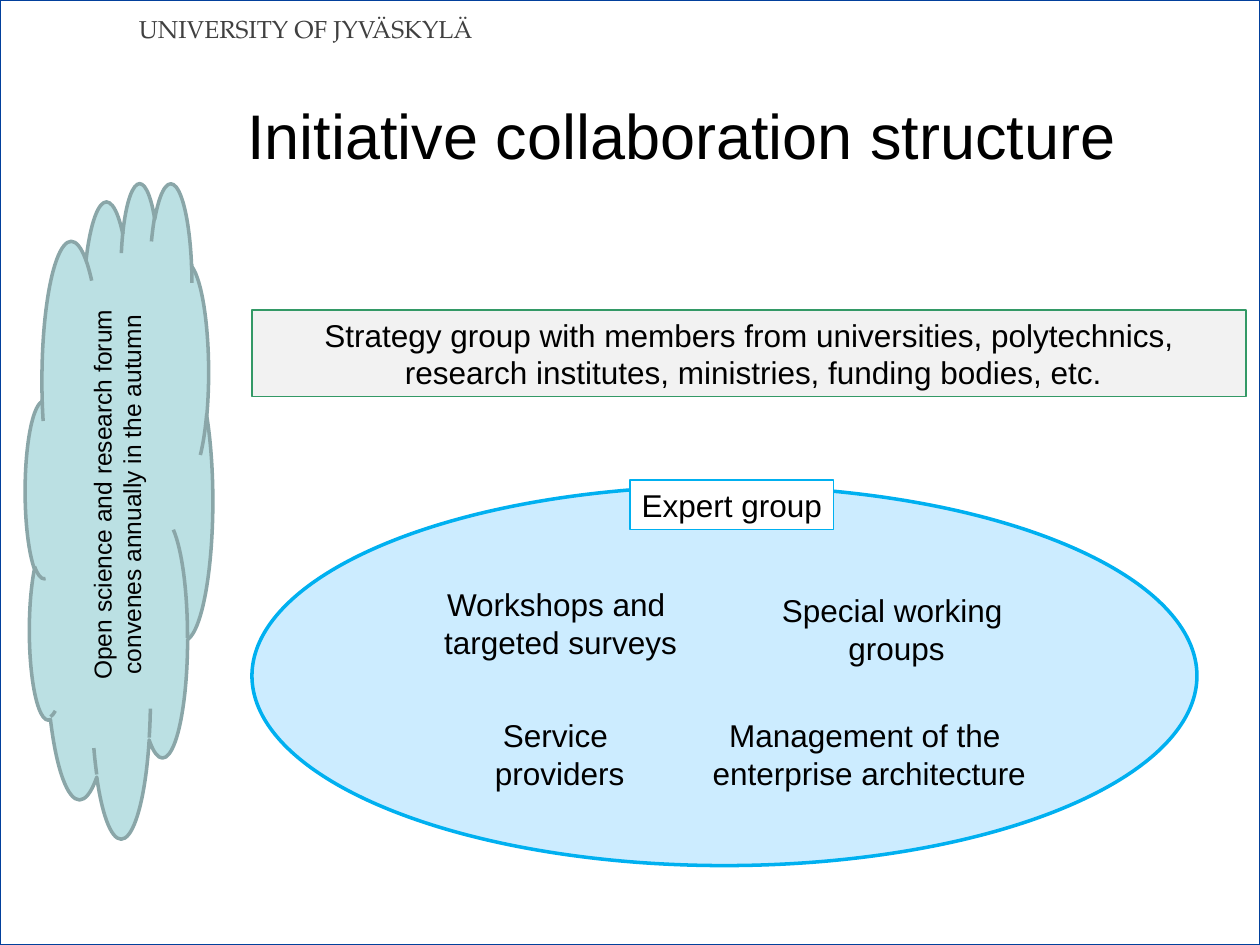
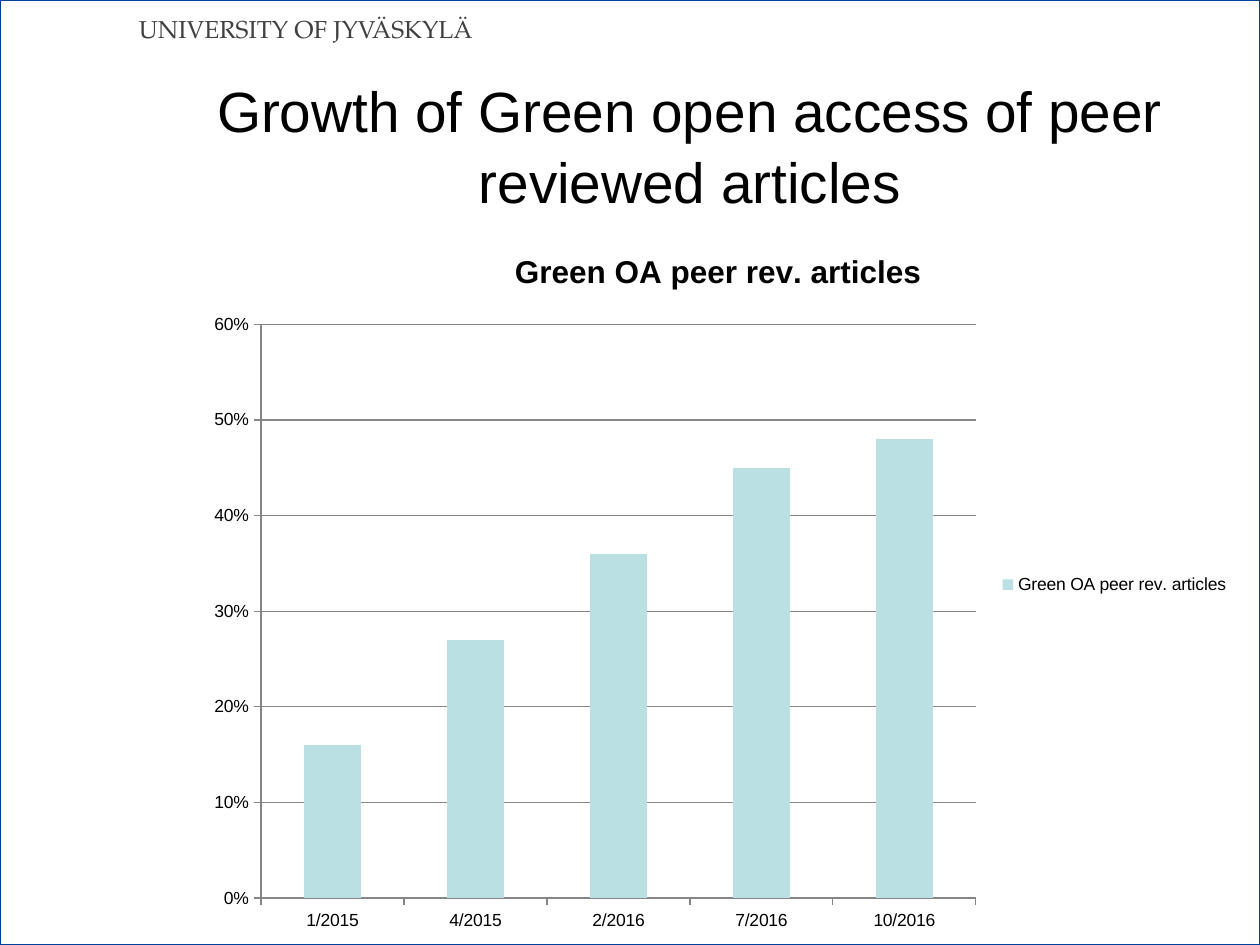
from dataclasses import dataclass
from typing import NamedTuple, Optional

from lxml import etree
from pptx import Presentation
from pptx.chart.data import CategoryChartData
from pptx.dml.color import RGBColor
from pptx.enum.chart import XL_CHART_TYPE as ChartType
from pptx.enum.chart import XL_LEGEND_POSITION as LegendPosition
from pptx.enum.chart import XL_TICK_MARK as TickMark
from pptx.enum.shapes import MSO_SHAPE as Preset
from pptx.enum.text import MSO_ANCHOR as Anchor
from pptx.enum.text import MSO_AUTO_SIZE as AutoSize
from pptx.enum.text import PP_ALIGN as Align
from pptx.oxml.ns import qn
from pptx.util import Cm, Pt


@dataclass(frozen=True)
class Theme:
    ink: str = "000000"
    header_ink: str = "404040"
    frame: str = "02409C"
    white: str = "FFFFFF"
    pale_blue: str = "CCECFF"
    bright_blue: str = "00B0F0"
    pale_grey: str = "F2F2F2"
    green: str = "339966"
    teal: str = "BBE0E3"
    dark_teal: str = "8AA6A8"
    grid: str = "868686"
    font: str = "Arial"
    header_font: str = "TeX Gyre Pagella"
    title_size: float = 36
    long_title_size: float = 32.4
    body_size: float = 18
    small_size: float = 14
    chart_size: float = 10


THEME = Theme()


class Box(NamedTuple):
    """Left, top, width and height in centimetres."""
    left: float
    top: float
    width: float
    height: float

    def lengths(self) -> tuple:
        return tuple(Cm(value) for value in self)


@dataclass(frozen=True)
class Figure:
    preset: Preset
    box: Box
    fill: Optional[str] = None
    line: Optional[str] = None
    weight: float = 0.75


@dataclass(frozen=True)
class Label:
    text: str
    box: Box


PAGE = Box(0, 0, 25.4, 19.05)
HEADER = Label("UNIVERSITY OF JYVÄSKYLÄ", Box(2.57, 0.1, 7.6, 0.94))
FRAME = Figure(Preset.RECTANGLE, PAGE, line=THEME.frame, weight=1.25)

EXPERT_ELLIPSE = Figure(Preset.OVAL, Box(5.08, 9.8, 19.05, 7.65),
                        THEME.pale_blue, THEME.bright_blue, 2)
STRATEGY_BAR = Figure(Preset.RECTANGLE, Box(5.08, 6.25, 20.04, 1.75),
                      THEME.pale_grey, THEME.green)
EXPERT_TAG = Figure(Preset.RECTANGLE, Box(12.7, 9.68, 4.11, 0.99),
                    THEME.white, THEME.bright_blue)
FORUM_CLOUD = Figure(Preset.CLOUD, Box(0.51, 3.66, 3.78, 13.21),
                     THEME.teal, THEME.dark_teal, 2)

EXPERT_TASKS = (
    Label("Special working \ngroups", Box(15.52, 11.81, 5.11, 1.75)),
    Label("Workshops and \ntargeted surveys", Box(8.71, 11.68, 5.18, 1.75)),
    Label("Management of the \nenterprise architecture", Box(14.12, 14.33, 6.81, 1.75)),
    Label("Service \nproviders", Box(9.75, 14.33, 3.07, 1.75)),
)
FORUM = Label("Open science and research forum\nconvenes annually in the autumn",
              Box(1.5, 6.1, 1.7, 7.75))

ARTICLE_SHARES = {"1/2015": 0.16, "4/2015": 0.27, "2/2016": 0.36,
                  "7/2016": 0.45, "10/2016": 0.48}
CHART_NAME = "Green OA peer rev. articles"
CHART_BOX = Box(3.91, 4.52, 21.13, 14.53)
PLOT_SHARES = {"x": 0.064, "y": 0.139, "w": 0.682, "h": 0.796}


def color(value: str) -> RGBColor:
    return RGBColor.from_string(value)


def set_font(font, *, size: float, ink: str = THEME.ink, name: str = THEME.font,
             bold: bool = False) -> None:
    font.name, font.size, font.bold = name, Pt(size), bold
    font.color.rgb = color(ink)


def write(shape, text: str, *, size: float = THEME.body_size, ink: str = THEME.ink,
          font: str = THEME.font, align: Align = Align.CENTER, wrap: bool = False,
          spacing: Optional[float] = None, vertical: bool = False) -> None:
    """Fill a shape with one paragraph for each line of text."""
    frame = shape.text_frame
    frame.word_wrap = wrap
    frame.auto_size = AutoSize.NONE
    frame.vertical_anchor = Anchor.MIDDLE
    frame.margin_left = frame.margin_right = Cm(0.23)
    frame.margin_top = frame.margin_bottom = Cm(0.1)
    if vertical:
        frame._txBody.bodyPr.set("vert", "vert270")
    for index, line in enumerate(text.split("\n")):
        para = frame.add_paragraph() if index else frame.paragraphs[0]
        para.alignment = align
        if spacing:
            para.line_spacing = spacing
        span = para.add_run()
        span.text = line
        set_font(span.font, size=size, ink=ink, name=font)


def add_figure(page, figure: Figure):
    shape = page.shapes.add_shape(figure.preset, *figure.box.lengths())
    shape.shadow.inherit = False
    if figure.fill:
        shape.fill.solid()
        shape.fill.fore_color.rgb = color(figure.fill)
    else:
        shape.fill.background()
    shape.line.color.rgb = color(figure.line)
    shape.line.width = Pt(figure.weight)
    return shape


def add_label(page, label: Label, **text_format) -> None:
    write(page.shapes.add_textbox(*label.box.lengths()), label.text, **text_format)


def add_page(deck, title: Label, **title_format):
    """Add a slide with the shared frame, header and title."""
    page = deck.slides.add_slide(deck.slide_layouts.get_by_name("Title Only"))
    add_figure(page, FRAME)
    add_label(page, HEADER, size=THEME.small_size, ink=THEME.header_ink,
              font=THEME.header_font, align=Align.LEFT)
    heading = page.shapes.title
    heading.left, heading.top, heading.width, heading.height = title.box.lengths()
    write(heading, title.text, wrap=True, **title_format)
    return page


def place_plot(chart) -> None:
    """Fix the inner plot area as shares of the chart."""
    area = chart._chartSpace.chart.plotArea
    for old in area.findall(qn("c:layout")):
        area.remove(old)
    layout = etree.Element(qn("c:layout"))
    manual = etree.SubElement(layout, qn("c:manualLayout"))
    settings = {"layoutTarget": "inner", "xMode": "edge", "yMode": "edge", **PLOT_SHARES}
    for name, value in settings.items():
        etree.SubElement(manual, qn(f"c:{name}")).set("val", str(value))
    area.insert(0, layout)


def draw_line(line) -> None:
    line.color.rgb = color(THEME.grid)
    line.width = Pt(0.75)


def add_article_chart(page) -> None:
    data = CategoryChartData(number_format="0%")
    data.categories = list(ARTICLE_SHARES)
    data.add_series(CHART_NAME, list(ARTICLE_SHARES.values()))
    chart = page.shapes.add_chart(ChartType.COLUMN_CLUSTERED,
                                  *CHART_BOX.lengths(), data).chart
    set_font(chart.font, size=THEME.chart_size)

    chart.has_title = True
    title = chart.chart_title.text_frame
    title.text = CHART_NAME
    set_font(title.paragraphs[0].runs[0].font, size=THEME.body_size, bold=True)
    chart.has_legend = True
    chart.legend.position = LegendPosition.RIGHT
    chart.legend.include_in_layout = False

    for axis in (chart.category_axis, chart.value_axis):
        axis.major_tick_mark = TickMark.OUTSIDE
        axis.minor_tick_mark = TickMark.NONE
        draw_line(axis.format.line)
    values = chart.value_axis
    values.minimum_scale, values.maximum_scale, values.major_unit = 0, 0.6, 0.1
    values.has_major_gridlines = True
    draw_line(values.major_gridlines.format.line)
    values.tick_labels.number_format = "0%"
    values.tick_labels.number_format_is_linked = False

    plot = chart.plots[0]
    plot.gap_width = 150
    plot.vary_by_categories = False
    columns = plot.series[0].format.fill
    columns.solid()
    columns.fore_color.rgb = color(THEME.teal)
    place_plot(chart)


def build_structure(deck) -> None:
    title = Label("Initiative collaboration structure", Box(2.31, 1.12, 22.86, 3.18))
    page = add_page(deck, title, size=THEME.title_size)
    add_figure(page, EXPERT_ELLIPSE)
    write(add_figure(page, STRATEGY_BAR),
          "Strategy group with members from universities, polytechnics,\n"
          " research institutes, ministries, funding bodies, etc.", wrap=True)
    for task in EXPERT_TASKS:
        add_label(page, task)
    write(add_figure(page, EXPERT_TAG), "Expert group")
    add_figure(page, FORUM_CLOUD)
    add_label(page, FORUM, size=THEME.small_size, vertical=True)


def build_growth(deck) -> None:
    title = Label("Growth of Green open access of peer reviewed articles",
                  Box(3.3, 1.3, 21.21, 3.18))
    page = add_page(deck, title, size=THEME.long_title_size, spacing=1.05)
    add_article_chart(page)


def main() -> None:
    deck = Presentation()
    deck.slide_width, deck.slide_height = Cm(PAGE.width), Cm(PAGE.height)
    build_structure(deck)
    build_growth(deck)
    deck.save("out.pptx")


if __name__ == "__main__":
    main()
